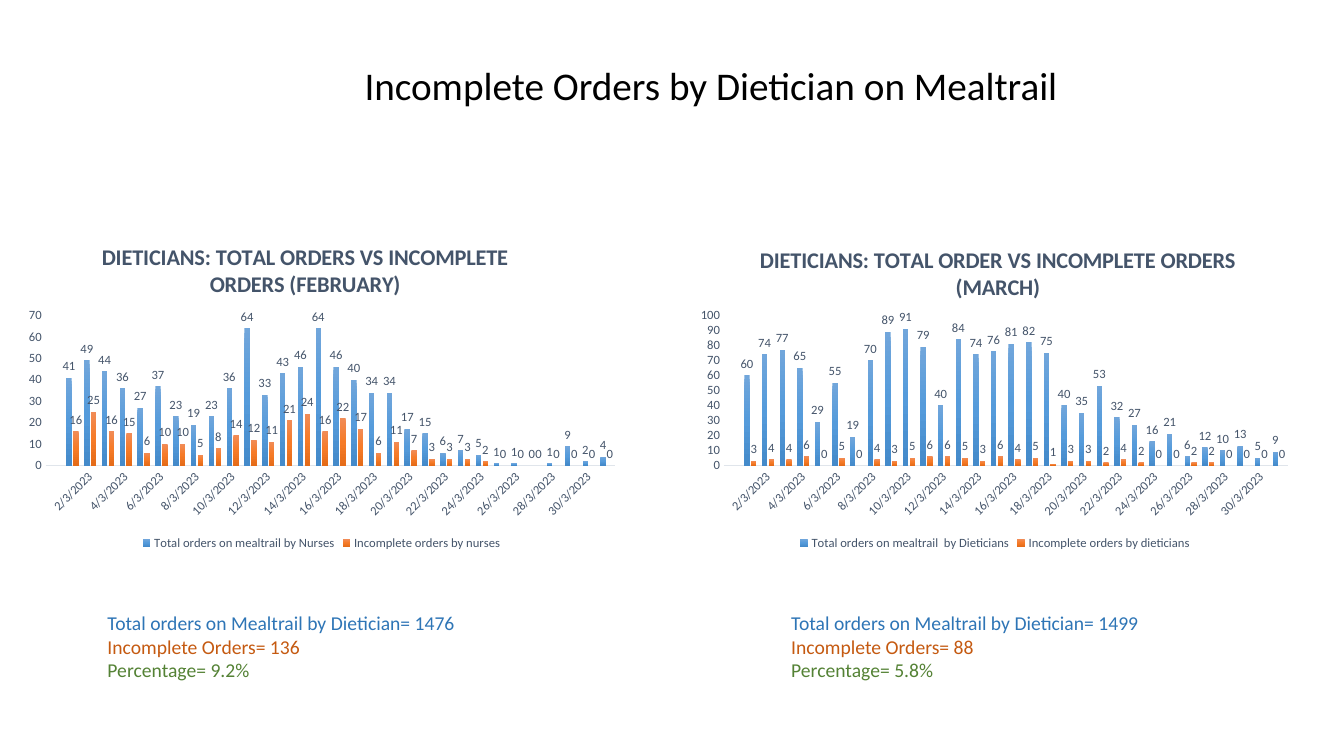
from copy import deepcopy
from lxml import etree
from pptx import Presentation
from pptx import util as u
from pptx.chart.data import CategoryChartData
from pptx.dml.color import RGBColor
from pptx.enum import chart as ch, text
from pptx.oxml import parse_xml
from pptx.oxml.ns import nsdecls, qn

FONT = "Calibri"
COLORS = {
    "title": "000000", "chart_text": "44546A", "axis": "E0E5EB",
    "total": "2E75B6", "incomplete": "C55A11", "percentage": "548235",
}
GRADIENTS = [["71A6DB", "559BDB", "448ACA"], ["F18C57", "F67B28", "E56C19"]]
DAYS = [""] + [f"{day}/3/2023" for day in range(1, 32)]
MONTHS = [
    {
        "left": 0.38, "note_dx": 2.08, "axis_max": 70,
        "title": "DIETICIANS: TOTAL ORDERS VS INCOMPLETE ORDERS (FEBRUARY)",
        "title_at": (0.135, 0.05), "plot": (0.05, 0.284, 0.93, 0.45),
        "series": {
            "Total orders on mealtrail by Nurses": [
                41, 49, 44, 36, 27, 37, 23, 19, 23, 36, 64, 33, 43, 46, 64, 46,
                40, 34, 34, 17, 15, 6, 7, 5, 1, 1, 0, 1, 9, 2, 4],
            "Incomplete orders by nurses": [
                16, 25, 16, 15, 6, 10, 10, 5, 8, 14, 12, 11, 21, 24, 16, 22,
                17, 6, 11, 7, 3, 3, 3, 2, 0, 0, 0, 0, 0, 0, 0],
        },
        "note": {"total": 1476, "incomplete": 136, "percentage": "9.2%"},
    },
    {
        "left": 17.35, "note_dx": 2.34, "axis_max": 100,
        "title": "DIETICIANS: TOTAL ORDER VS INCOMPLETE ORDERS (MARCH)",
        "title_at": (0.11, 0.06), "plot": (0.058, 0.284, 0.92, 0.45),
        "series": {
            "Total orders on mealtrail  by Dieticians": [
                60, 74, 77, 65, 29, 55, 19, 70, 89, 91, 79, 40, 84, 74, 76, 81,
                82, 75, 40, 35, 53, 32, 27, 16, 21, 6, 12, 10, 13, 5, 9],
            "Incomplete orders by dieticians": [
                3, 4, 4, 6, 0, 5, 0, 4, 3, 5, 6, 6, 5, 3, 6, 4,
                5, 1, 3, 3, 2, 4, 2, 0, 0, 2, 2, 0, 0, 0, 0],
        },
        "note": {"total": 1499, "incomplete": 88, "percentage": "5.8%"},
    },
]
NOTE_LABELS = {
    "total": "Total orders on Mealtrail by Dietician",
    "incomplete": "Incomplete Orders",
    "percentage": "Percentage",
}


def style(font, size, color, bold=False):
    font.name, font.size, font.bold = FONT, u.Pt(size), bold
    font.color.rgb = RGBColor.from_string(COLORS[color])


def make_layout(target=None, **fractions):
    layout = parse_xml(f"<c:layout {nsdecls('c')}><c:manualLayout/></c:layout>")
    manual = layout[0]
    settings = {"layoutTarget": target} if target else {}
    settings |= {"xMode": "edge", "yMode": "edge"} | fractions
    for tag, value in settings.items():
        etree.SubElement(manual, qn(f"c:{tag}")).set("val", str(value))
    return layout


def fill_gradient(series, colors):
    fill = series.format.fill
    fill.gradient()
    fill.gradient_angle = 270
    first = next(series._element.iter(qn("a:gs")))
    first.addnext(deepcopy(first))
    for stop, position, color in zip(fill.gradient_stops, (0, 0.5, 1), colors):
        stop.position = position
        stop.color.rgb = RGBColor.from_string(color)


def add_title(s, left, top, width, height):
    sp = s.shapes.title
    sp.left, sp.top, sp.width, sp.height = map(u.Cm, (left, top, width, height))
    tf = sp.text_frame
    tf.text = "Incomplete Orders by Dietician on Mealtrail"
    tf.vertical_anchor = text.MSO_ANCHOR.MIDDLE
    p = tf.paragraphs[0]
    p.alignment = text.PP_ALIGN.CENTER
    style(p.runs[0].font, 28, "title")


def format_axes(chart, axis_max):
    days, orders = chart.category_axis, chart.value_axis
    for axis in (days, orders):
        axis.has_major_gridlines = False
        axis.major_tick_mark = axis.minor_tick_mark = ch.XL_TICK_MARK.NONE
        style(axis.tick_labels.font, 9, "chart_text")
    days.format.line.color.rgb = RGBColor.from_string(COLORS["axis"])
    days.format.line.width = u.Pt(0.75)
    days._element.find(qn("c:txPr")).find(qn("a:bodyPr")).set("rot", "-2700000")
    orders.format.line.fill.background()
    orders.minimum_scale, orders.maximum_scale = 0, axis_max
    orders.major_unit = 10


def format_title(chart, month):
    chart.has_title = True
    title = chart.chart_title
    title.include_in_layout = False
    title.text_frame.text = month["title"]
    style(title.text_frame.paragraphs[0].runs[0].font, 16, "chart_text", True)
    element = title._element
    for old in element.findall(qn("c:layout")):
        element.remove(old)
    x, y = month["title_at"]
    element.find(qn("c:tx")).addnext(make_layout(x=x, y=y))


def add_orders_chart(s, month, left, top, width, height):
    data = CategoryChartData()
    data.categories = DAYS
    for name, values in month["series"].items():
        data.add_series(name, [None] + values)
    chart = s.shapes.add_chart(
        ch.XL_CHART_TYPE.COLUMN_CLUSTERED,
        *map(u.Cm, (left, top, width, height)), data).chart
    style(chart.font, 10, "title")
    format_title(chart, month)
    format_axes(chart, month["axis_max"])

    plot = chart.plots[0]
    plot.gap_width, plot.overlap, plot.vary_by_categories = 100, -24, False
    for series, colors in zip(plot.series, GRADIENTS):
        fill_gradient(series, colors)
        labels = series.data_labels
        labels.show_value = True
        labels.position = ch.XL_LABEL_POSITION.OUTSIDE_END
        style(labels.font, 9, "chart_text")

    area = chart._chartSpace.chart.plotArea
    for old in area.findall(qn("c:layout")):
        area.remove(old)
    x, y, w, h = month["plot"]
    area.insert(0, make_layout("inner", x=x, y=y, w=w, h=h))

    chart.has_legend = True
    chart.legend.position = ch.XL_LEGEND_POSITION.BOTTOM
    chart.legend.include_in_layout = False
    style(chart.legend.font, 9, "chart_text")


def add_note(s, note, left, top, width, height):
    tf = s.shapes.add_textbox(*map(u.Cm, (left, top, width, height))).text_frame
    tf.word_wrap = True
    tf.text = "\n".join(f"{NOTE_LABELS[key]}= {value}" for key, value in note.items())
    for p, key in zip(tf.paragraphs, note):
        style(p.runs[0].font, 14, key)


def add_month(s, month, left, top, width):
    add_orders_chart(s, month, left, top, width, 8.41)
    add_note(s, month["note"], left + month["note_dx"], top + 9.71, 10.74, 2.82)


def main():
    prs = Presentation()
    prs.slide_width, prs.slide_height = u.Cm(33.87), u.Cm(19.05)
    s = prs.slides.add_slide(prs.slide_layouts[5])
    add_title(s, 7.49, 1.42, 20.85, 1.45)
    for month in MONTHS:
        add_month(s, month, month["left"], 5.56, 15.44)
    prs.save("out.pptx")


if __name__ == "__main__":
    main()
